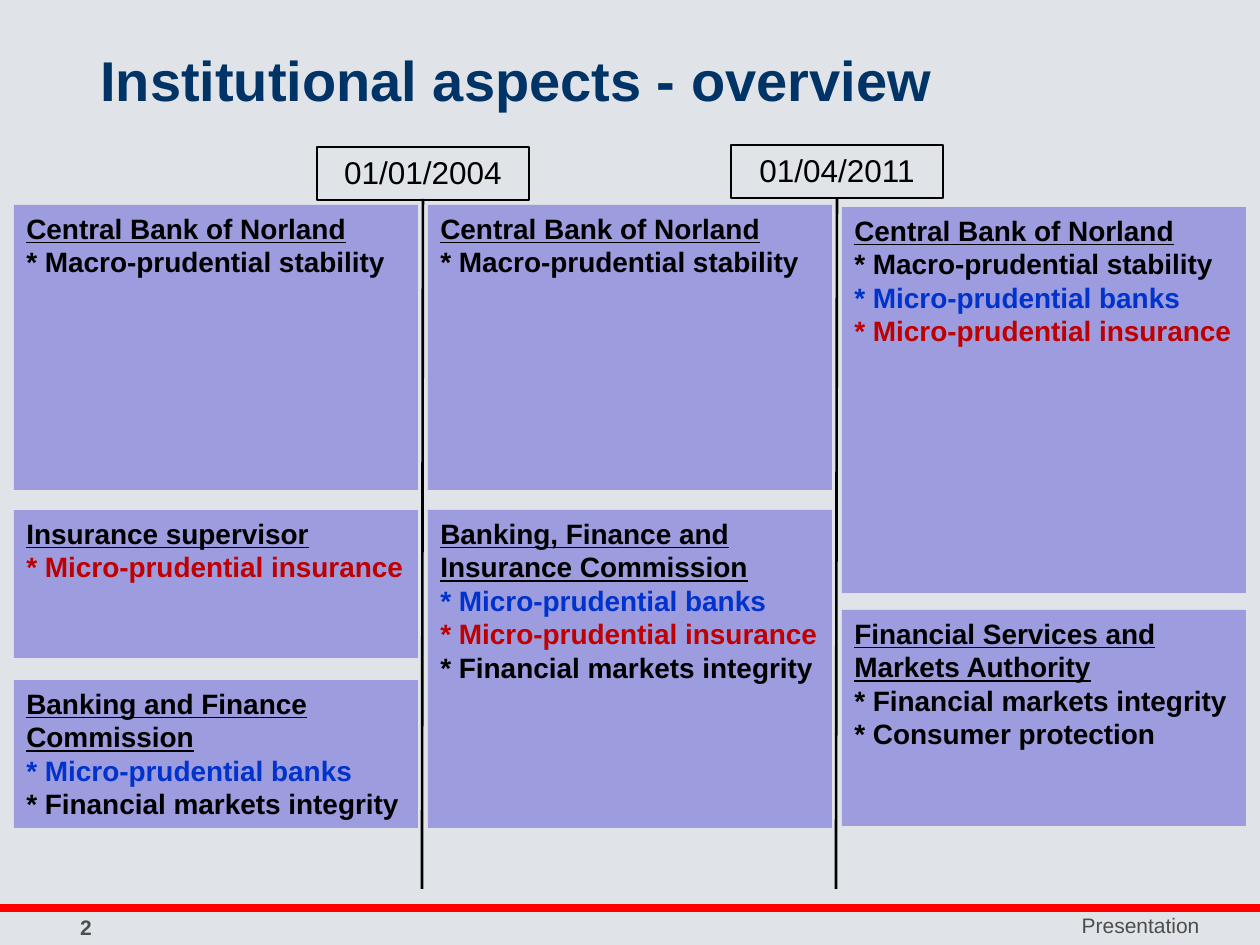
import pptx
import pptx.dml.color
import pptx.enum.shapes
import pptx.enum.text
import pptx.oxml
import pptx.oxml.ns
import pptx.util

EMU_PER_PX = 914400 // 126
COLORS = {
    "background": "E0E4E8",
    "panel": "9C9CDF",
    "title": "003366",
    "footer": "4D4D4D",
    "rule": "FF0000",
    "black": "000000",
    "blue": "0033CC",
    "red": "C00000",
}
ALIGN = pptx.enum.text.PP_ALIGN
ANCHOR = pptx.enum.text.MSO_ANCHOR
COLUMN_LEFT, COLUMN_STEP, PANEL_WIDTH = 14, 414, 404

MACRO = ("* Macro-prudential stability", "black")
BANKS = ("* Micro-prudential banks", "blue")
INSURANCE = ("* Micro-prudential insurance", "red")
MARKETS = ("* Financial markets integrity", "black")
CONSUMERS = ("* Consumer protection", "black")

PANELS = [
    (0, 205, 285, "Central Bank of Norland", [MACRO]),
    (0, 510, 148, "Insurance supervisor", [INSURANCE]),
    (0, 680, 148, "Banking and Finance Commission", [BANKS, MARKETS]),
    (1, 205, 285, "Central Bank of Norland", [MACRO]),
    (1, 510, 318, "Banking, Finance and Insurance Commission",
     [BANKS, INSURANCE, MARKETS]),
    (2, 207, 386, "Central Bank of Norland", [MACRO, BANKS, INSURANCE]),
    (2, 610, 216, "Financial Services and Markets Authority",
     [MARKETS, CONSUMERS]),
]
MILESTONES = [("01/01/2004", 317, 147), ("01/04/2011", 731, 145)]


def px(value):
    """Turn pixels into EMU."""
    return pptx.util.Emu(value * EMU_PER_PX)


def rgb(name):
    """Look up a named colour."""
    return pptx.dml.color.RGBColor.from_string(COLORS[name])


def write_paragraph(paragraph, text, color, size, align=ALIGN.LEFT, **formats):
    """Fill a paragraph with one formatted run."""
    paragraph.alignment = align
    run = paragraph.add_run()
    run.text = text
    run.font.color.rgb = rgb(color)
    formats = {"name": "Arial", "size": pptx.util.Pt(size), **formats}
    for attribute, value in formats.items():
        setattr(run.font, attribute, value)


def add_label(slide, box, text, color, size, anchor=ANCHOR.TOP, **formats):
    """Add a text box holding one paragraph."""
    frame = slide.shapes.add_textbox(*map(px, box)).text_frame
    frame.word_wrap = True
    frame.vertical_anchor = anchor
    write_paragraph(frame.paragraphs[0], text, color, size, **formats)


def add_rectangle(slide, box, fill=None, line=None):
    """Add a rectangle and return its text frame."""
    shape = slide.shapes.add_shape(
        pptx.enum.shapes.MSO_SHAPE.RECTANGLE, *map(px, box))
    shape.shadow.inherit = False
    if fill:
        shape.fill.solid()
        shape.fill.fore_color.rgb = rgb(fill)
    else:
        shape.fill.background()
    if line:
        shape.line.color.rgb = rgb(line)
        shape.line.width = pptx.util.Pt(1.5)
    else:
        shape.line.fill.background()
    frame = shape.text_frame
    frame.word_wrap = True
    frame.vertical_anchor = ANCHOR.TOP
    return frame


def add_panel(slide, column, top, height, authority, duties):
    """Add an authority with its duties."""
    left = COLUMN_LEFT + column * COLUMN_STEP
    frame = add_rectangle(slide, (left, top, PANEL_WIDTH, height), "panel")
    write_paragraph(frame.paragraphs[0], authority, "black", 16,
                    bold=True, underline=True)
    for text, color in duties:
        write_paragraph(frame.add_paragraph(), text, color, 16, bold=True)


def add_line(slide, start, end, color, width):
    """Add a straight line without shadow."""
    line = slide.shapes.add_connector(
        pptx.enum.shapes.MSO_CONNECTOR.STRAIGHT, *map(px, start + end))
    line.line.color.rgb = rgb(color)
    line.line.width = pptx.util.Pt(width)
    properties = line._element.spPr
    properties.append(pptx.oxml.parse_xml(
        f"<a:effectLst {pptx.oxml.ns.nsdecls('a')}/>"))


def add_milestone(slide, date, left, top):
    """Add a dated box above its dividing line."""
    center = left + 106
    add_line(slide, (center, 199), (center - 1, 889), "black", 1.5)
    frame = add_rectangle(slide, (left, top, 212, 53), line="black")
    write_paragraph(frame.paragraphs[0], date, "black", 18, ALIGN.CENTER)


def main():
    """Build the slide and save it."""
    presentation = pptx.Presentation()
    presentation.slide_width = px(1260)
    presentation.slide_height = px(945)
    slide = presentation.slides.add_slide(presentation.slide_layouts[6])
    slide.background.fill.solid()
    slide.background.fill.fore_color.rgb = rgb("background")

    add_label(slide, (630, 906, 582, 38), "Presentation", "footer", 12,
              align=ALIGN.RIGHT)
    add_line(slide, (0, 908), (1260, 908), "rule", 4.5)
    add_label(slide, (0, 908, 110, 38), "2 ", "footer", 12,
              align=ALIGN.RIGHT, bold=True)
    add_label(slide, (88, 0, 1114, 158), "Institutional aspects - overview",
              "title", 32, ANCHOR.MIDDLE, bold=True)
    for panel in PANELS:
        add_panel(slide, *panel)
    for milestone in MILESTONES:
        add_milestone(slide, *milestone)
    presentation.save("out.pptx")


if __name__ == "__main__":
    main()
